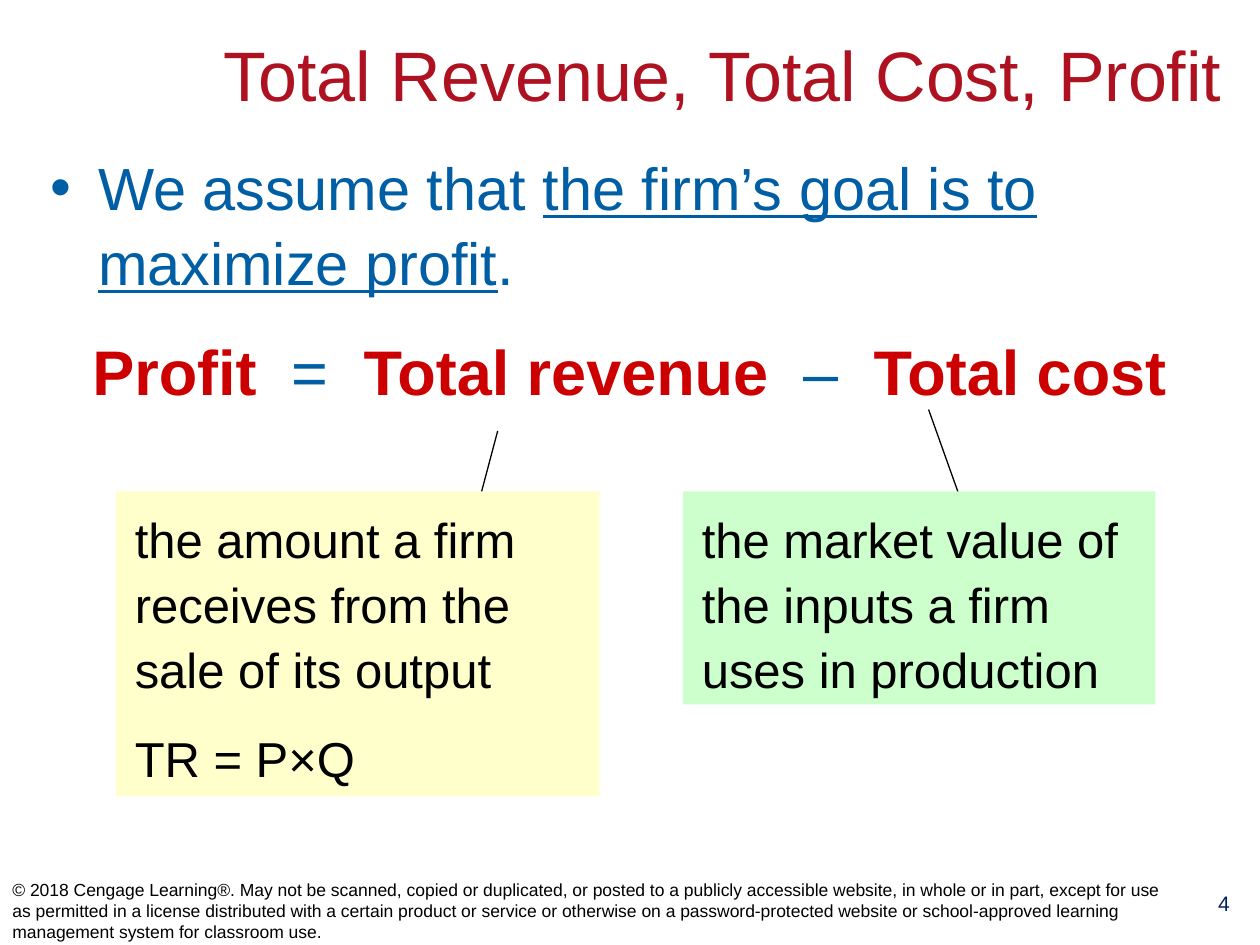
from lxml import etree
from pptx import Presentation
from pptx.dml.color import RGBColor
from pptx.enum import shapes, text
from pptx.oxml import ns
from pptx.util import Inches, Pt

BLUE, RED, BLACK = "005EA4", "CC0000", "000000"
MIDDLE, CENTER = text.MSO_ANCHOR.MIDDLE, text.PP_ALIGN.CENTER


def color(value):
    return RGBColor.from_string(value)


def write(frame, paragraphs, size, ink=BLACK, align=text.PP_ALIGN.LEFT,
          anchor=text.MSO_ANCHOR.TOP, spacing=1.0, gap=0, margins=(0.1, 0.05)):
    frame.word_wrap = True
    frame.vertical_anchor = anchor
    frame.margin_left = frame.margin_right = Inches(margins[0])
    frame.margin_top = frame.margin_bottom = Inches(margins[1])
    for index, spans in enumerate(paragraphs):
        para = frame.add_paragraph() if index else frame.paragraphs[0]
        para.alignment = align
        para.line_spacing = spacing
        para.space_before = Pt(gap if index else 0)
        for words, look in spans:
            span = para.add_run()
            span.text = words
            span.font.name = "Arial"
            span.font.size = Pt(look.get("size", size))
            span.font.bold = look.get("bold", False)
            span.font.underline = look.get("underline", False)
            span.font.color.rgb = color(look.get("ink", ink))


deck = Presentation()
deck.slide_width, deck.slide_height = Inches(10), Inches(7.5)
page = deck.slides.add_slide(deck.slide_layouts[6])

title = page.shapes.add_textbox(Inches(1.47), Inches(0.11), Inches(8.53), Inches(0.94))
write(title.text_frame, [[("Total Revenue, Total Cost, Profit", {})]], 40,
      ink="AE1221", align=CENTER, anchor=MIDDLE)

term = {"size": 36, "bold": True, "ink": RED}
sign = {"size": 36}
body = page.shapes.add_textbox(Inches(0.3), Inches(1.12), Inches(9.39), Inches(5.93))
write(body.text_frame, [
    [("We assume that ", {}),
     ("the firm’s goal is to maximize profit", {"underline": True}),
     (".", {})],
    [("Profit", term), ("  =  ", sign), ("Total revenue", term),
     ("  –  ", sign), ("Total cost", term)],
], 34, ink=BLUE, spacing=1.05, gap=18)
goal, equation = body.text_frame.paragraphs
equation.alignment = CENTER
bullet = goal._p.get_or_add_pPr()
bullet.set("marL", str(Inches(0.38)))
bullet.set("indent", str(Inches(-0.38)))
etree.SubElement(bullet, ns.qn("a:buFont")).set("typeface", "Arial")
etree.SubElement(bullet, ns.qn("a:buChar")).set("char", "•")

number = page.shapes.add_textbox(Inches(9.43), Inches(7.02), Inches(0.57), Inches(0.41))
write(number.text_frame, [[("4", {})]], 12, ink="002060", align=CENTER)

notice = page.shapes.add_textbox(Inches(0), Inches(6.96), Inches(9.41), Inches(0.54))
write(notice.text_frame, [[(
    "© 2018 Cengage Learning®. May not be scanned, copied or duplicated, or posted to a "
    "publicly accessible website, in whole or in part, except for use as permitted in a "
    "license distributed with a certain product or service or otherwise on a "
    "password-protected website or school-approved learning management system for "
    "classroom use.", {})]], 10, anchor=MIDDLE)

callouts = [
    (0.92, 3.84, 2.42, "FFFFCC", (3.78, 4.06, 3.95, 3.42),
     ["the amount a firm receives from the sale of its output", "TR = P×Q"]),
    (5.42, 3.75, 1.69, "CCFFCC", (7.63, 3.98, 7.37, 3.25),
     ["the market value of the inputs a firm uses in production"]),
]
for left, width, height, fill, ends, lines in callouts:
    pointer = page.shapes.add_connector(shapes.MSO_CONNECTOR.STRAIGHT, *map(Inches, ends))
    pointer.line.color.rgb = color(BLACK)
    pointer.line.width = Pt(0.75)
    etree.SubElement(pointer._element.spPr, ns.qn("a:effectLst"))

    box = page.shapes.add_shape(shapes.MSO_SHAPE.RECTANGLE, Inches(left), Inches(3.9),
                                Inches(width), Inches(height))
    box.shadow.inherit = False
    box.fill.solid()
    box.fill.fore_color.rgb = color(fill)
    box.line.fill.background()
    write(box.text_frame, [[(line, {})] for line in lines], 28,
          spacing=1.1, gap=14, margins=(0.15, 0.1))

deck.save("out.pptx")
